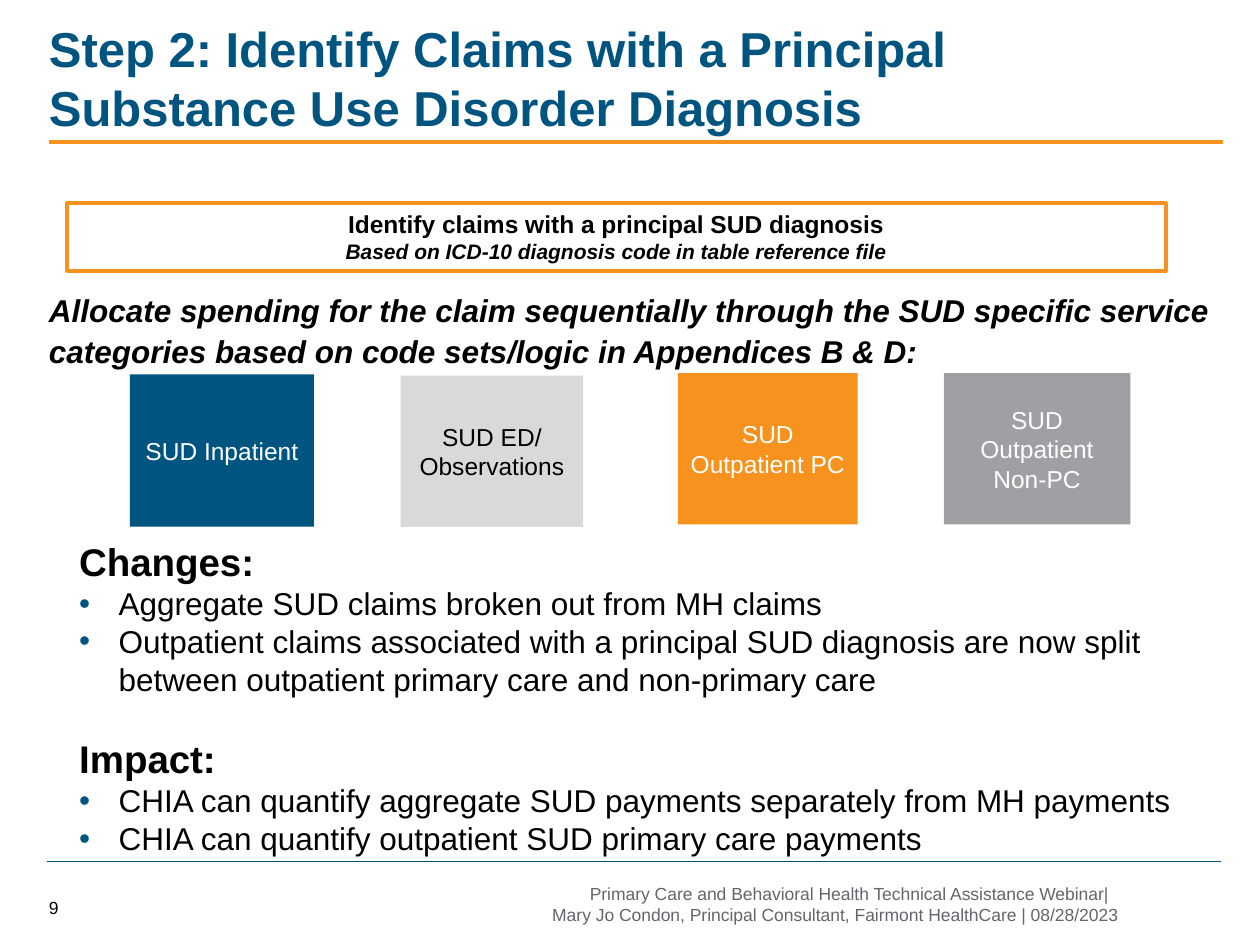
from lxml import etree
from pptx import Presentation
from pptx.dml.color import RGBColor
from pptx.enum.shapes import MSO_CONNECTOR, MSO_SHAPE
from pptx.enum.text import MSO_ANCHOR, PP_ALIGN
from pptx.oxml.ns import qn
from pptx.util import Pt

RECT = MSO_SHAPE.RECTANGLE
STRAIGHT = MSO_CONNECTOR.STRAIGHT
TOP, MIDDLE, BOTTOM = MSO_ANCHOR.TOP, MSO_ANCHOR.MIDDLE, MSO_ANCHOR.BOTTOM
LEFT, CENTER, RIGHT = PP_ALIGN.LEFT, PP_ALIGN.CENTER, PP_ALIGN.RIGHT

BLUE = RGBColor(0x00, 0x54, 0x80)
RULE_ORANGE = RGBColor(0xF7, 0x92, 0x1E)
ORANGE = RGBColor(0xF8, 0x92, 0x1E)
LIGHT_GREY = RGBColor(0xD9, 0xD9, 0xD9)
GREY = RGBColor(0xA0, 0xA0, 0xA4)
FOOTER_GREY = RGBColor(0x63, 0x66, 0x6A)
BLACK = RGBColor(0x00, 0x00, 0x00)
WHITE = RGBColor(0xFF, 0xFF, 0xFF)

CATEGORIES = [
    ((74.2, 213.9, 105.2, 87.1), ["SUD Inpatient"], BLUE, WHITE),
    ((229, 214.7, 104.2, 86.4), ["SUD ED/", "Observations"], LIGHT_GREY, BLACK),
    ((387.4, 213.3, 102.7, 86.4), ["SUD Outpatient PC"], ORANGE, WHITE),
    ((539.3, 213.3, 106.6, 86.4), ["SUD Outpatient", "Non-PC"], GREY, WHITE),
]
SECTIONS = [
    ("Changes:", [
        "Aggregate SUD claims broken out from MH claims",
        "Outpatient claims associated with a principal SUD diagnosis are now "
        "split between outpatient primary care and non-primary care",
    ]),
    ("Impact:", [
        "CHIA can quantify aggregate SUD payments separately from MH payments",
        "CHIA can quantify outpatient SUD primary care payments",
    ]),
]


def format_paragraph(p, size, color=BLACK, bold=False, italic=False, align=LEFT):
    """Set the alignment of a paragraph and the font of its runs."""
    p.alignment = align
    for r in p.runs:
        font = r.font
        font.name, font.size = "Arial", Pt(size)
        font.bold, font.italic = bold, italic
        font.color.rgb = color


def fill_text(sp, lines, size, anchor=TOP, **style):
    """Write lines as equally formatted paragraphs and return the text frame."""
    tf = sp.text_frame
    tf.word_wrap = True
    tf.vertical_anchor = anchor
    tf.text = "\n".join(lines)
    for p in tf.paragraphs:
        format_paragraph(p, size, **style)
    return tf


def add_text(s, box, lines, size, **style):
    """Add a text box and return its text frame."""
    sp = s.shapes.add_textbox(*map(Pt, box))
    return fill_text(sp, lines, size, **style)


def add_rect(s, box, fill, line=None):
    """Add a flat rectangle with an optional outline."""
    sp = s.shapes.add_shape(RECT, *map(Pt, box))
    sp.shadow.inherit = False
    sp.fill.solid()
    sp.fill.fore_color.rgb = fill
    if line is None:
        sp.line.fill.background()
    else:
        sp.line.color.rgb = line
        sp.line.width = Pt(2)
    return sp


def add_rule(s, x, y, width, color, weight):
    """Add a horizontal line."""
    line = s.shapes.add_connector(STRAIGHT, Pt(x), Pt(y), Pt(x + width), Pt(y))
    line.line.color.rgb = color
    line.line.width = Pt(weight)
    etree.SubElement(line._element.spPr, qn("a:effectLst"))


def add_bullet(p, indent):
    """Give a paragraph a blue bullet with a hanging indent in points."""
    pPr = p._p.get_or_add_pPr()
    pPr.set("marL", str(Pt(indent)))
    pPr.set("indent", str(-Pt(indent)))
    color = etree.SubElement(pPr, qn("a:buClr"))
    etree.SubElement(color, qn("a:srgbClr")).set("val", str(BLUE))
    etree.SubElement(pPr, qn("a:buFont")).set("typeface", "Arial")
    etree.SubElement(pPr, qn("a:buChar")).set("char", "•")


def add_header(s, box):
    """Add the title and the orange rule under it."""
    x, y, _, h = box
    title = "Step 2: Identify Claims with a Principal Substance Use Disorder Diagnosis"
    add_text(s, box, [title], 28, anchor=BOTTOM, color=BLUE, bold=True)
    add_rule(s, x + 7.2, y + h, 671, RULE_ORANGE, 2.25)


def add_claim_step(s, box):
    """Add the outlined box that names the claim selection."""
    lines = ["Identify claims with a principal SUD diagnosis",
             "Based on ICD-10 diagnosis code in table reference file"]
    tf = fill_text(add_rect(s, box, WHITE, ORANGE), lines, 14, bold=True, align=CENTER)
    format_paragraph(tf.paragraphs[1], 12, bold=True, italic=True, align=CENTER)


def add_allocation(s, box):
    """Add the allocation sentence and the service category boxes."""
    sentence = ("Allocate spending for the claim sequentially through the SUD specific "
                "service categories based on code sets/logic in Appendices B & D:")
    tf = add_text(s, box, [sentence], 18, bold=True, italic=True)
    tf.paragraphs[0].line_spacing = 1.07
    for category_box, lines, fill, color in CATEGORIES:
        sp = add_rect(s, category_box, fill)
        fill_text(sp, lines, 14, anchor=MIDDLE, color=color, align=CENTER)


def add_sections(s, box):
    """Add the headed bullet lists."""
    tf = add_text(s, box, [], 18)
    for i, (heading, bullets) in enumerate(SECTIONS):
        p = tf.add_paragraph() if i else tf.paragraphs[0]
        p.text = heading
        if i:
            p.space_before = Pt(21.5)
        format_paragraph(p, 22, bold=True)
        for bullet in bullets:
            p = tf.add_paragraph()
            p.text = bullet
            add_bullet(p, 22.5)
            format_paragraph(p, 18)


def add_footer(s, box):
    """Add the bottom rule, the page number and the event credit."""
    x, y, w, h = box
    add_rule(s, x + 5.7, y - 10, 671, BLUE, 0.75)
    add_text(s, (x, y + 2, 41.8, h), ["9"], 10, anchor=MIDDLE)
    lines = ["Primary Care and Behavioral Health Technical Assistance Webinar|",
             "Mary Jo Condon, Principal Consultant, Fairmont HealthCare | 08/28/2023"]
    tf = add_text(s, (x + w - 350.6, y, 350.6, h), lines, 10,
                  anchor=MIDDLE, color=FOOTER_GREY, align=RIGHT)
    for p, margin in zip(tf.paragraphs, (5.5, 0)):
        p._p.get_or_add_pPr().set("marR", str(Pt(margin)))


def main():
    """Build the slide and save it."""
    prs = Presentation()
    prs.slide_width, prs.slide_height = Pt(720), Pt(540)
    s = prs.slides.add_slide(prs.slide_layouts[6])
    add_header(s, (20.9, 6.5, 630, 74.9))
    add_claim_step(s, (38.2, 115.9, 628, 38.9))
    add_allocation(s, (20.9, 161.5, 702, 52.6))
    add_sections(s, (38.2, 304, 640.8, 191.5))
    add_footer(s, (20.9, 502.3, 624.9, 28.8))
    prs.save("out.pptx")


if __name__ == "__main__":
    main()
